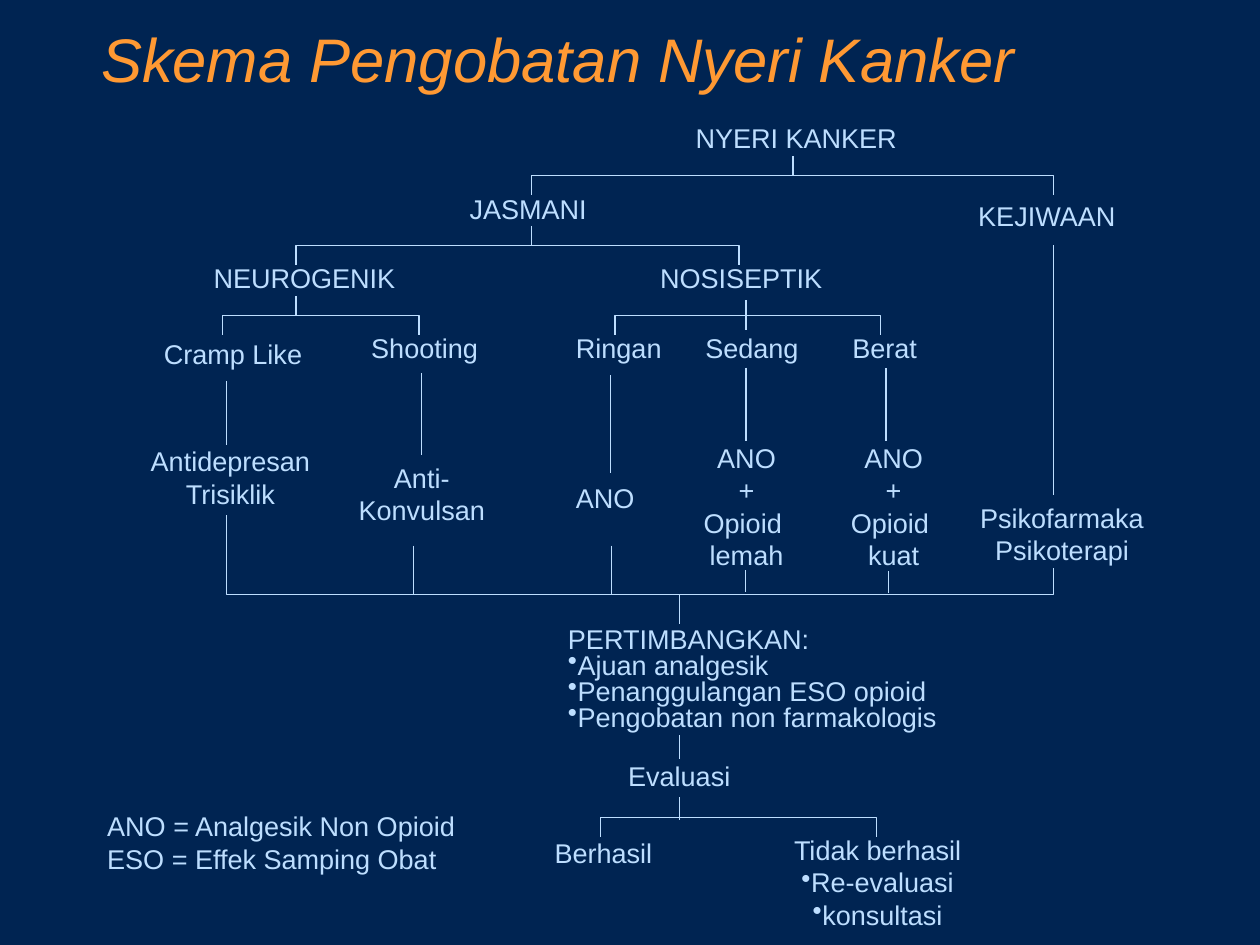
"""Build the slide with the cancer pain treatment scheme."""
import pptx
import pptx.util
import pptx.dml.color
import pptx.enum.shapes
import pptx.enum.text
import pptx.oxml.ns
import lxml.etree

Inches = pptx.util.Inches
Align = pptx.enum.text.PP_ALIGN
Fit = pptx.enum.text.MSO_AUTO_SIZE
NAVY, ORANGE, PALE = "002452", "FF9933", "BDDEFF"
ROW = 0.49

LABELS = [
    ("NYERI KANKER", 7.78, 1.3, 2.43),
    ("JASMANI", 5.23, 2.1, 1.48),
    ("KEJIWAAN", 10.97, 2.18, 1.71),
    ("NEUROGENIK", 2.34, 2.88, 2.21),
    ("NOSISEPTIK", 7.38, 2.88, 1.99),
    ("Cramp Like", 1.78, 3.74, 1.72),
    ("Shooting", 4.12, 3.67, 1.36),
    ("Ringan", 6.43, 3.67, 1.12),
    ("Sedang", 7.89, 3.67, 1.21),
    ("Berat", 9.55, 3.67, 0.9),
    ("ANO", 6.43, 5.37, 0.82),
    ("Evaluasi", 7.02, 8.51, 1.3),
    ("Berhasil", 6.19, 9.37, 1.26),
]
DRUGS = [
    (["Antidepresan", "Trisiklik"], 1.58, 4.95, 2.04, 0.85),
    (["Anti-", "Konvulsan"], 3.97, 5.14, 1.58, 0.85),
    (["ANO", "+", "Opioid ", "lemah"], 7.82, 4.91, 1.21, 1.58),
    (["ANO", "+", "Opioid ", "kuat"], 9.48, 4.91, 1.21, 1.58),
    (["Psikofarmaka", "Psikoterapi"], 10.94, 5.59, 2.09, 0.85),
    (["Tidak berhasil", "•Re-evaluasi", "•konsultasi"], 8.84, 9.34, 2.13, 1.22),
]
FORKS = [
    (6, 11.89, 1.98), (3.34, 8.34, 2.77), (2.51, 4.73, 3.56),
    (6.94, 9.94, 3.56), (6.78, 9.89, 9.23),
]
STEMS = [
    (8.95, 1.76, 1.98), (6, 2.55, 2.77), (11.89, 2.77, 5.59),
    (3.34, 3.34, 3.56), (8.42, 3.39, 3.73), (2.56, 4.3, 5.02),
    (6.89, 4.24, 5.34), (8.42, 4.15, 4.98), (4.67, 6.16, 6.72),
    (6.9, 6.16, 6.72), (8.41, 6.44, 6.68), (10.03, 6.45, 6.7),
    (7.67, 6.72, 7.05), (7.67, 8.3, 8.57),
]


def color(text):
    """Turn a hex string into a colour."""
    return pptx.dml.color.RGBColor.from_string(text)


def style(font, size, tint):
    """Set the face, size and colour of a font."""
    font.name = "Arial"
    font.size = pptx.util.Pt(size)
    font.color.rgb = color(tint)


def pad(frame):
    """Give a text frame its even inner margins."""
    frame.margin_left = frame.margin_right = Inches(0.07)
    frame.margin_top = frame.margin_bottom = Inches(0.07)


def bullet(para):
    """Put a round bullet right before a paragraph."""
    props = para._p.get_or_add_pPr()
    props.set("marL", "0")
    props.set("indent", "0")
    mark = lxml.etree.SubElement(props, pptx.oxml.ns.qn("a:buChar"))
    mark.set("char", "•")


def label(slide, lines, left, top, width, height, align=Align.LEFT, space=None):
    """Add a text box with one paragraph a line."""
    box = slide.shapes.add_textbox(*map(Inches, (left, top, width, height)))
    frame = box.text_frame
    pad(frame)
    frame.word_wrap = False
    frame.auto_size = Fit.SHAPE_TO_FIT_TEXT
    for index, line in enumerate(lines):
        para = frame.add_paragraph() if index else frame.paragraphs[0]
        para.alignment = align
        if space:
            para.line_spacing = space
        if line.startswith("•"):
            bullet(para)
        run = para.add_run()
        run.text = line.removeprefix("•")
        style(run.font, 22, PALE)
    return box


def stroke(line):
    """Draw a thin pale line."""
    line.color.rgb = color(PALE)
    line.width = pptx.util.Pt(1)


def stem(slide, x, top, end):
    """Add an upright line."""
    line = slide.shapes.add_connector(
        pptx.enum.shapes.MSO_CONNECTOR.STRAIGHT,
        Inches(x), Inches(top), Inches(x), Inches(end))
    stroke(line.line)
    props = line._element.spPr
    lxml.etree.SubElement(props, pptx.oxml.ns.qn("a:effectLst"))
    return line


def trace(slide, points):
    """Add an open outline through the points."""
    first, *rest = [(Inches(x), Inches(y)) for x, y in points]
    pen = slide.shapes.build_freeform(*first)
    pen.add_line_segments(rest, close=False)
    shape = pen.convert_to_shape()
    shape.shadow.inherit = False
    shape.fill.background()
    stroke(shape.line)


def fork(slide, left, right, top):
    """Add a bracket that opens downwards."""
    end = top + 0.22
    trace(slide, [(left, end), (left, top), (right, top), (right, end)])


def title(slide, text):
    """Place and fill the title."""
    shape = slide.shapes.title
    shape.left, shape.top = Inches(1.07), Inches(0)
    shape.width, shape.height = Inches(12.09), Inches(1.3)
    frame = shape.text_frame
    pad(frame)
    frame.auto_size = Fit.NONE
    frame.vertical_anchor = pptx.enum.text.MSO_ANCHOR.MIDDLE
    para = frame.paragraphs[0]
    para.alignment = Align.LEFT
    run = para.add_run()
    run.text = text
    style(run.font, 50, ORANGE)
    run.font.italic = True


def main():
    """Build and save the slide."""
    deck = pptx.Presentation()
    deck.slide_width, deck.slide_height = Inches(14.22), Inches(10.67)
    slide = deck.slides.add_slide(deck.slide_layouts.get_by_name("Title Only"))
    slide.background.fill.solid()
    slide.background.fill.fore_color.rgb = color(NAVY)
    title(slide, "Skema Pengobatan Nyeri Kanker")

    boxes = {}
    for text, left, top, width in LABELS:
        boxes[text] = label(slide, [text], left, top, width, ROW)
    for lines, *place in DRUGS:
        boxes[lines[0]] = label(slide, lines, *place, align=Align.CENTER)
    label(slide, ["PERTIMBANGKAN:", "•Ajuan analgesik",
                  "•Penanggulangan ESO opioid", "•Pengobatan non farmakologis"],
          6.34, 7.03, 4.32, 1.37, space=0.8)
    label(slide, ["ANO = Analgesik Non Opioid", "ESO = Effek Samping Obat"],
          1.14, 9.07, 4.17, 0.85)

    for place in FORKS:
        fork(slide, *place)
    trace(slide, [(2.56, 5.82), (2.56, 6.71), (11.89, 6.71), (11.89, 6.41)])
    for place in STEMS:
        stem(slide, *place)
    stem(slide, 4.76, 4.21, 5.14).end_connect(boxes["Anti-"], 0)
    stem(slide, 10, 4.16, 4.98).begin_connect(boxes["Berat"], 2)
    stem(slide, 7.67, 9, 9.26).begin_connect(boxes["Evaluasi"], 2)
    deck.save("out.pptx")


if __name__ == "__main__":
    main()
